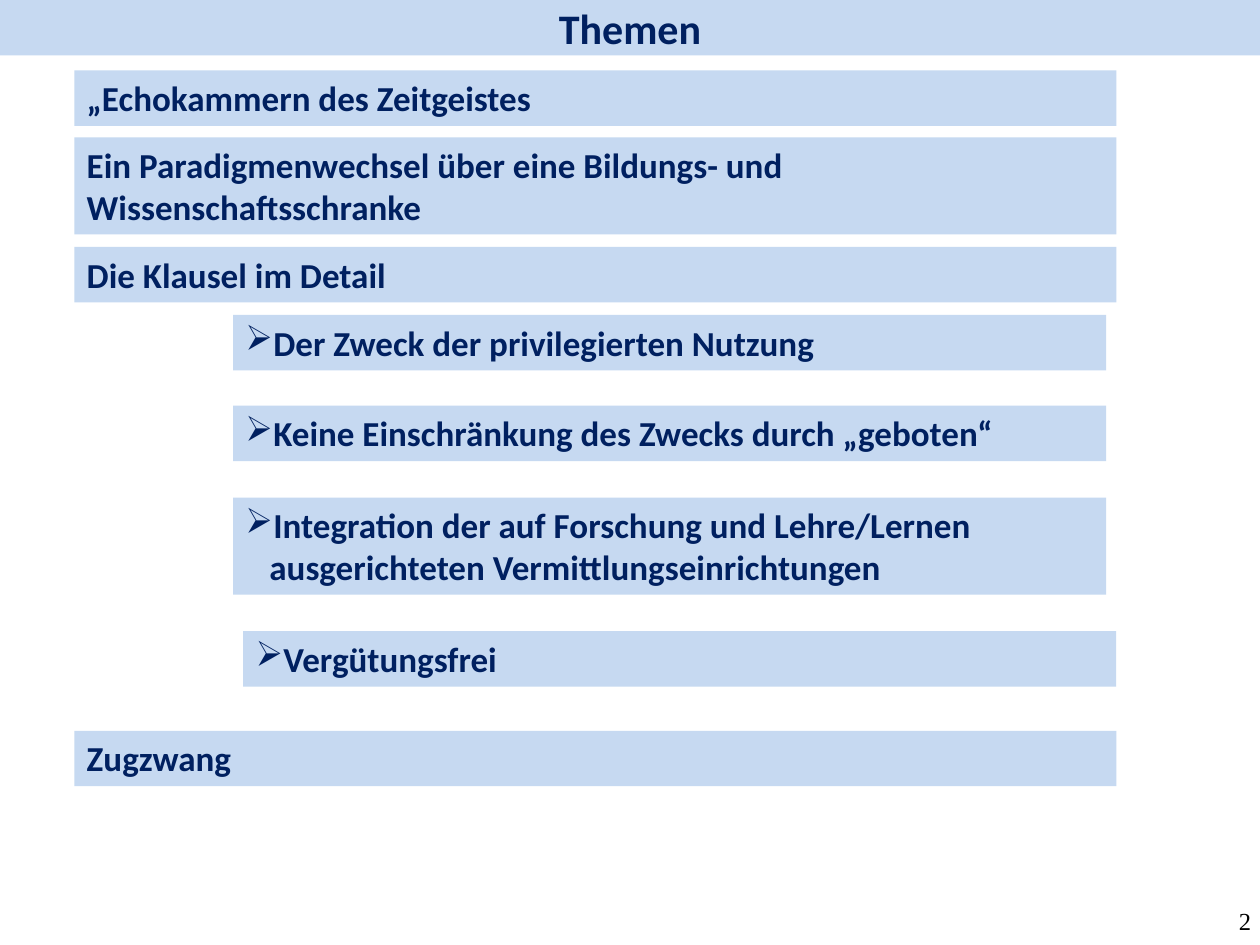
from dataclasses import dataclass

from lxml.etree import SubElement
from pptx import Presentation
from pptx.dml.color import RGBColor
from pptx.enum.shapes import MSO_SHAPE as Shape
from pptx.enum.text import MSO_ANCHOR as Anchor, MSO_AUTO_SIZE as AutoSize, PP_ALIGN as Align
from pptx.oxml.ns import qn
from pptx.util import Inches, Pt


@dataclass(frozen=True)
class Theme:
    bar: RGBColor = RGBColor.from_string("C6D9F1")
    ink: RGBColor = RGBColor.from_string("002060")
    black: RGBColor = RGBColor.from_string("000000")
    font: str = "Calibri"
    number_font: str = "Times New Roman"
    title_size: int = 24
    topic_size: int = 20
    number_size: int = 14


THEME = Theme()
WIDTH, HEIGHT = 10, 7.5
ONE_LINE, TWO_LINES = 0.44, 0.77
LEFT, RIGHT = 0.59, 8.86
SUB_LEFT, SUB_WIDTH = 1.85, 6.93
SHIFTED_LEFT = RIGHT - SUB_WIDTH
HANG = 0.19

# Topics: top, height, text
TOPICS = [
    (0.56, ONE_LINE, "„Echokammern des Zeitgeistes"),
    (1.09, TWO_LINES, "Ein Paradigmenwechsel über eine Bildungs- und Wissenschaftsschranke"),
    (1.96, ONE_LINE, "Die Klausel im Detail"),
    (5.8, ONE_LINE, "Zugzwang"),
]
# Subtopics: left, top, height, hanging indent, text
SUBTOPICS = [
    (SUB_LEFT, 2.5, ONE_LINE, 0, "Der Zweck der privilegierten Nutzung"),
    (SUB_LEFT, 3.22, ONE_LINE, 0, "Keine Einschränkung des Zwecks durch „geboten“"),
    (SUB_LEFT, 3.95, TWO_LINES, HANG,
     "Integration der auf Forschung und Lehre/Lernen ausgerichteten Vermittlungseinrichtungen"),
    (SHIFTED_LEFT, 5.01, ONE_LINE, 0, "Vergütungsfrei"),
]


def write(shape, text, size=THEME.topic_size, font=THEME.font, color=THEME.ink,
          bold=True, align=Align.LEFT, anchor=Anchor.TOP):
    frame = shape.text_frame
    frame.word_wrap = True
    frame.auto_size = AutoSize.NONE
    frame.vertical_anchor = anchor
    para = frame.paragraphs[0]
    para.alignment = align
    span = para.add_run()
    span.text = text
    span.font.name, span.font.size, span.font.bold = font, Pt(size), bold
    span.font.color.rgb = color
    return para


def add_bullet(para, hang):
    props = para._p.get_or_add_pPr()
    props.set("marL", str(Inches(hang)))
    props.set("indent", str(-Inches(hang)))
    SubElement(props, qn("a:buChar")).set("char", "➢")


def add_title(page, box, text):
    title = page.shapes.title
    title.left, title.top, title.width, title.height = map(Inches, box)
    title.fill.solid()
    title.fill.fore_color.rgb = THEME.bar
    write(title, text, size=THEME.title_size, align=Align.CENTER, anchor=Anchor.MIDDLE)


def add_bar(page, box, text):
    bar = page.shapes.add_shape(Shape.RECTANGLE, *map(Inches, box))
    bar.shadow.inherit = False
    bar.fill.solid()
    bar.fill.fore_color.rgb = THEME.bar
    bar.line.fill.background()
    return write(bar, text)


def add_page_number(page, box, text):
    number = page.shapes.add_textbox(*map(Inches, box))
    frame = number.text_frame
    frame.margin_left = frame.margin_right = frame.margin_top = 0
    frame.margin_bottom = Inches(0.08)
    write(number, text, size=THEME.number_size, font=THEME.number_font,
          color=THEME.black, bold=False, align=Align.RIGHT, anchor=Anchor.BOTTOM)


def main():
    deck = Presentation()
    deck.slide_width, deck.slide_height = Inches(WIDTH), Inches(HEIGHT)
    page = deck.slides.add_slide(deck.slide_layouts[5])

    add_title(page, (0, 0, WIDTH, ONE_LINE), "Themen")
    add_page_number(page, (9.25, 6.98, 0.68, 0.52), "2")

    # Main topics span the full column
    for top, height, text in TOPICS:
        add_bar(page, (LEFT, top, RIGHT - LEFT, height), text)

    # Bulleted details of the clause
    for left, top, height, hang, text in SUBTOPICS:
        add_bullet(add_bar(page, (left, top, SUB_WIDTH, height), text), hang)

    deck.save("out.pptx")


if __name__ == "__main__":
    main()
